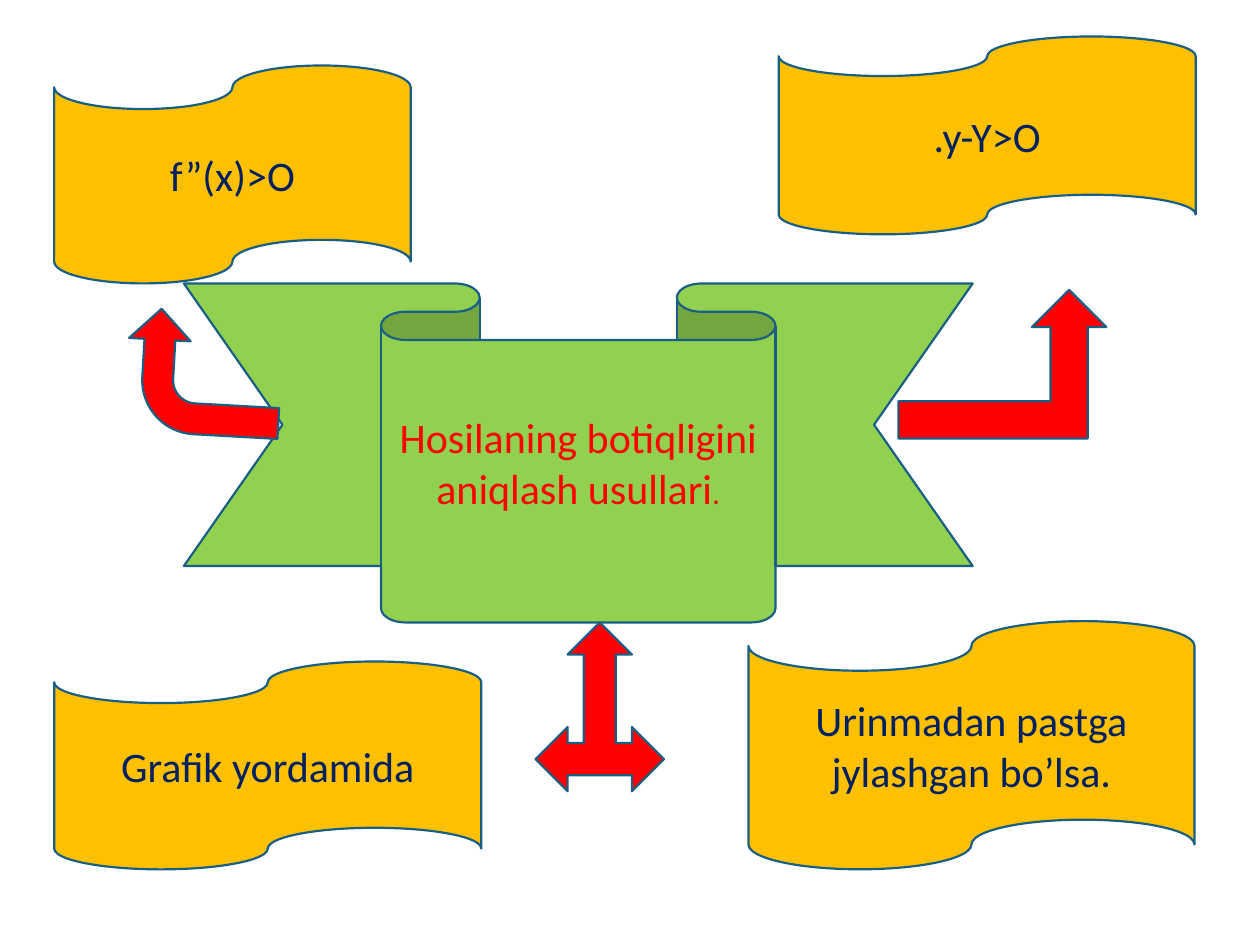
from pptx import Presentation
from pptx import util as u
from pptx.dml.color import RGBColor
from pptx.enum import shapes, text

AMBER = RGBColor(0xFF, 0xC0, 0x00)
GREEN = RGBColor(0x92, 0xD0, 0x50)
RED = RGBColor(0xFF, 0x00, 0x00)
NAVY = RGBColor(0x00, 0x20, 0x60)
OUTLINE = RGBColor(0x19, 0x5F, 0x84)

CELL = u.Inches(0.1)  # grid of 100 columns by 75 rows
Kind = shapes.MSO_SHAPE


def add_text(paragraph, words, size=24, color=NAVY, font="Calibri"):
    run = paragraph.add_run()
    run.text = words
    run.font.size = u.Pt(size)
    run.font.name = font
    run.font.color.rgb = color


class Diagram:
    def __init__(self, slide):
        self.slide = slide

    def outlined(self, kind, box, fill):
        """Place a preset shape; box is left, top, width, height in cells."""
        shape = self.slide.shapes.add_shape(kind, *(round(n * CELL) for n in box))
        shape.shadow.inherit = False
        shape.fill.solid()
        shape.fill.fore_color.rgb = fill
        shape.line.color.rgb = OUTLINE
        shape.line.width = u.Pt(1.25)
        return shape

    def label(self, shape):
        frame = shape.text_frame
        frame.word_wrap = True
        frame.vertical_anchor = text.MSO_ANCHOR.MIDDLE
        paragraph = frame.paragraphs[0]
        paragraph.alignment = text.PP_ALIGN.CENTER
        return paragraph

    def method(self, words, box):
        tape = self.outlined(Kind.FLOWCHART_PUNCHED_TAPE, box, AMBER)
        add_text(self.label(tape), words)

    def title(self, words, ending, box):
        ribbon = self.outlined(Kind.DOWN_RIBBON, box, GREEN)
        paragraph = self.label(ribbon)
        add_text(paragraph, words, color=RED)
        add_text(paragraph, ending, size=18, color=RED)
        ribbon.text_frame.margin_bottom = u.Inches(0.35)  # lifts the title

    def arrow(self, kind, box, rotation=0):
        self.outlined(kind, box, RED).rotation = rotation


def main():
    presentation = Presentation()
    presentation.slide_width = 100 * CELL
    presentation.slide_height = 75 * CELL
    diagram = Diagram(presentation.slides.add_slide(presentation.slide_layouts[6]))

    # Methods in the four corners
    diagram.method(".y-Y>O", (61.8, 2.9, 33.1, 15.7))
    diagram.method("Grafik yordamida", (4.3, 52.5, 33.9, 16.5))
    diagram.method("Urinmadan pastga jylashgan bo’lsa.", (59.4, 49.3, 35.4, 19.7))
    diagram.method("f”(x)>O", (4.3, 5.2, 28.3, 17.3))

    # Central ribbon
    diagram.title("Hosilaning botiqligini aniqlash usullari", ".",
                  (14.6, 22.5, 62.6, 26.9))

    # Arrows from the ribbon to the methods
    diagram.arrow(Kind.BENT_UP_ARROW, (71.3, 23, 16.5, 11.8))
    diagram.arrow(Kind.BENT_ARROW, (11.3, 23.5, 9.8, 12.2), rotation=273.2)
    diagram.arrow(Kind.LEFT_RIGHT_UP_ARROW, (42.5, 49.4, 10.2, 13.4))

    presentation.save("out.pptx")


if __name__ == "__main__":
    main()
